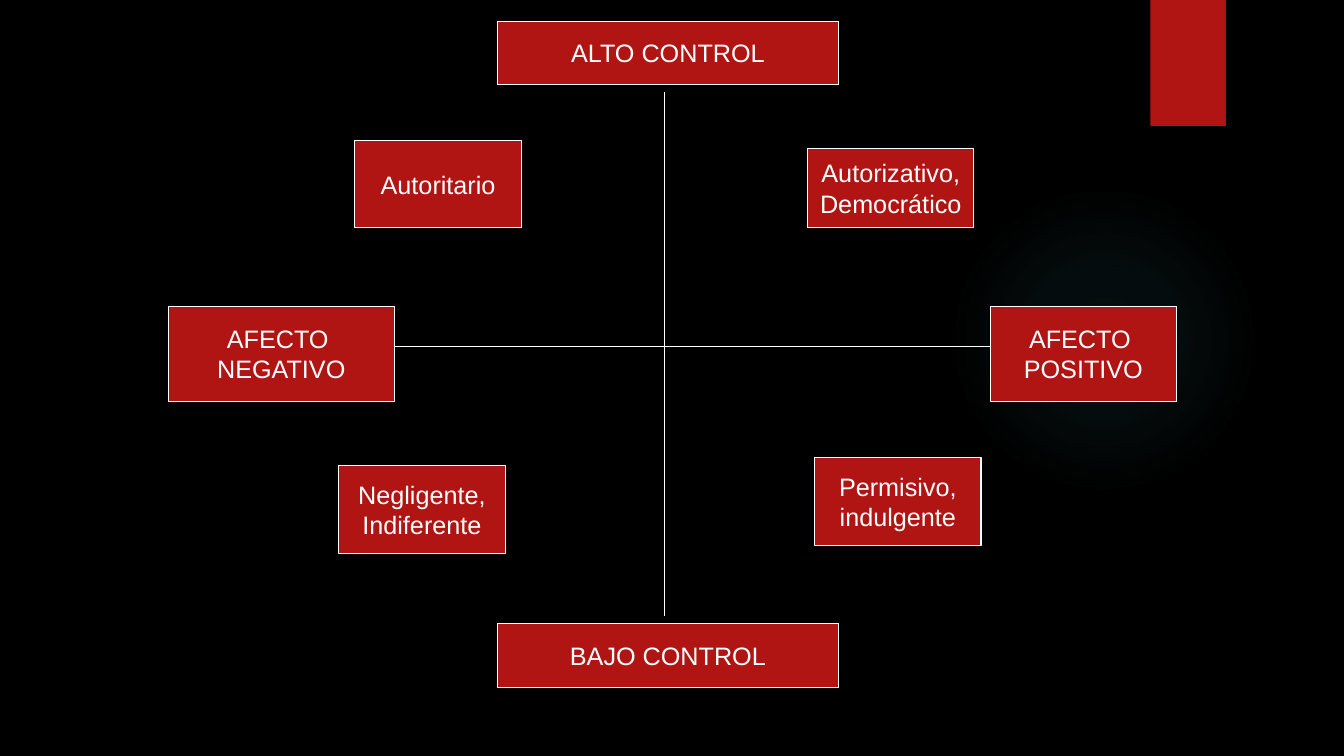
import pptx
import pptx.util
import pptx.oxml
import pptx.oxml.ns
import pptx.dml.color
import pptx.enum.shapes
import pptx.enum.text
from pptx.util import Inches

COLORS = {"back": "000000", "red": "B01513", "white": "FFFFFF", "glow": "50B9C1"}
FONT = "Arial"
RECT = pptx.enum.shapes.MSO_SHAPE.RECTANGLE
OVAL = pptx.enum.shapes.MSO_SHAPE.OVAL
NS = pptx.oxml.ns.nsdecls("a")

AXES = [(3.04, 3.44, 10.13, 3.44), (6.59, 0.91, 6.59, 6.11)]
STYLES = [
    (8.01, 1.47, 1.65, 0.79, "Autorizativo,\nDemocrático"),
    (8.08, 4.54, 1.65, 0.87, "Permisivo,\nindulgente"),
    (3.36, 4.62, 1.65, 0.87, "Negligente,\nIndiferente"),
    (3.52, 1.39, 1.65, 0.87, "Autoritario"),
]
POLES = [
    (4.93, 0.21, 3.39, 0.63, "ALTO CONTROL"),
    (4.93, 6.19, 3.39, 0.63, "BAJO CONTROL"),
    (9.82, 3.04, 1.85, 0.94, "AFECTO \nPOSITIVO"),
    (1.67, 3.04, 2.24, 0.94, "AFECTO \nNEGATIVO"),
]
STOPS = [(0, 7), (36, 6), (69, 0)]


def color(name):
    return pptx.dml.color.RGBColor.from_string(COLORS[name])


def add_shape(slide, kind, left, top, width, height):
    shape = slide.shapes.add_shape(
        kind, Inches(left), Inches(top), Inches(width), Inches(height))
    shape.shadow.inherit = False
    shape.fill.solid()
    shape.fill.fore_color.rgb = color("red")
    shape.line.fill.background()
    return shape


def add_glow(slide, left, top, size):
    glow = add_shape(slide, OVAL, left, top, size, size)
    stops = "".join(
        f'<a:gs pos="{pos * 1000}"><a:srgbClr val="{COLORS["glow"]}">'
        f'<a:alpha val="{alpha * 1000}"/></a:srgbClr></a:gs>'
        for pos, alpha in STOPS)
    grad = pptx.oxml.parse_xml(
        f'<a:gradFill {NS} rotWithShape="1"><a:gsLst>{stops}</a:gsLst>'
        '<a:path path="circle"><a:fillToRect l="50000" t="50000" '
        'r="50000" b="50000"/></a:path></a:gradFill>')
    props = glow._element.spPr
    props.replace(props.find(pptx.oxml.ns.qn("a:solidFill")), grad)


def set_line(line):
    line.color.rgb = color("white")
    line.width = pptx.util.Pt(0.75)


def add_axis(slide, *ends):
    axis = slide.shapes.add_connector(
        pptx.enum.shapes.MSO_CONNECTOR.STRAIGHT, *map(Inches, ends))
    set_line(axis.line)
    axis._element.spPr.append(pptx.oxml.parse_xml(f"<a:effectLst {NS}/>"))


def add_box(slide, left, top, width, height, text):
    box = add_shape(slide, RECT, left, top, width, height)
    set_line(box.line)
    frame = box.text_frame
    frame.word_wrap = False
    frame.vertical_anchor = pptx.enum.text.MSO_ANCHOR.MIDDLE
    frame.text = text
    for para in frame.paragraphs:
        para.alignment = pptx.enum.text.PP_ALIGN.CENTER
        for run in para.runs:
            run.font.name = FONT
            run.font.size = pptx.util.Pt(18)
            run.font.color.rgb = color("white")


def main():
    deck = pptx.Presentation()
    deck.slide_width = Inches(13.33)
    deck.slide_height = Inches(7.5)
    slide = deck.slides.add_slide(deck.slide_layouts[6])
    slide.background.fill.solid()
    slide.background.fill.fore_color.rgb = color("back")
    add_glow(slide, 9.41, 1.83, 3.08)
    add_shape(slide, RECT, 11.41, 0, 0.75, 1.25)
    for axis in AXES:
        add_axis(slide, *axis)
    for box in STYLES + POLES:
        add_box(slide, *box)
    deck.save("out.pptx")


if __name__ == "__main__":
    main()
